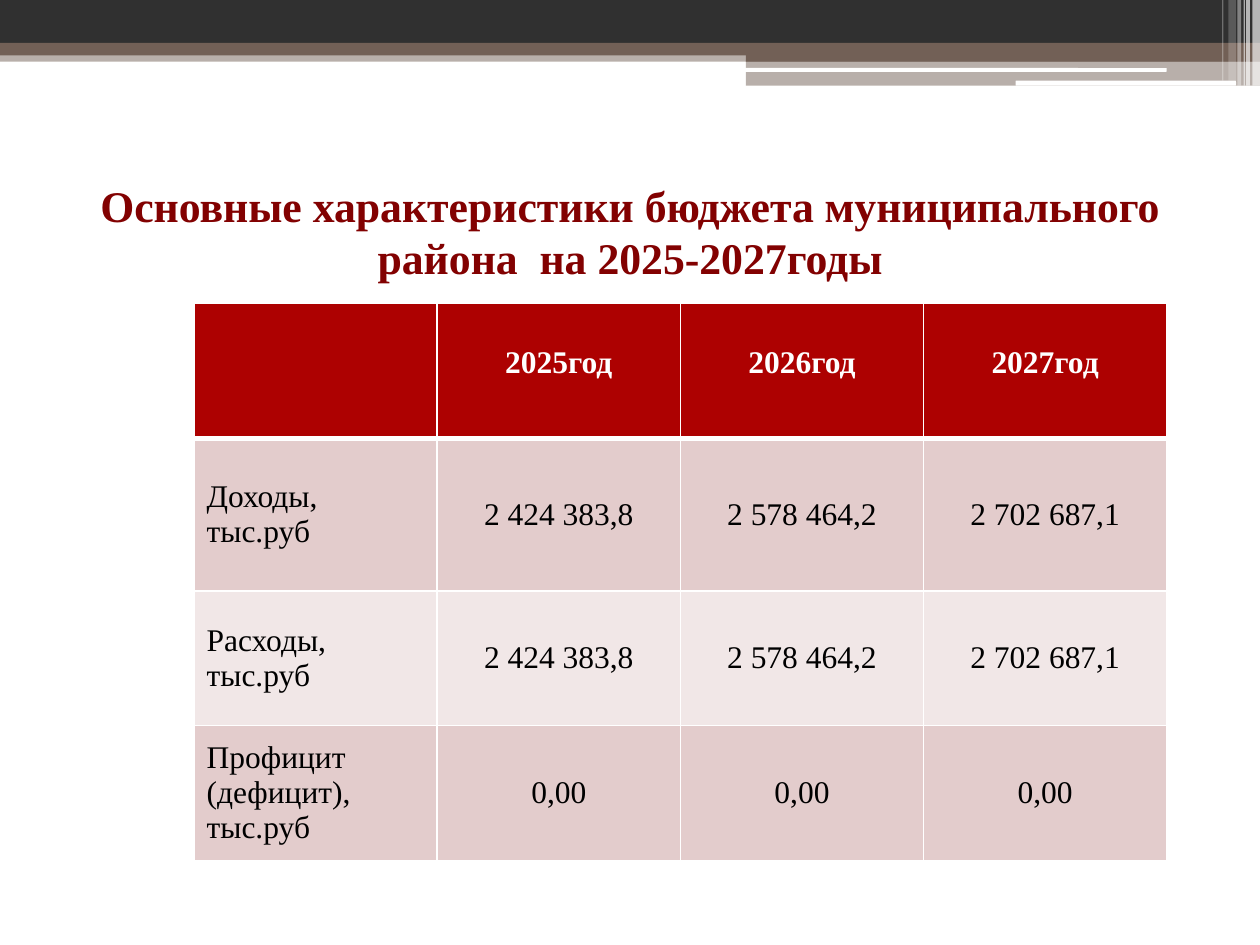
from lxml.etree import SubElement
from pptx import Presentation
from pptx.dml.color import RGBColor
from pptx.enum.shapes import MSO_SHAPE
from pptx.enum.text import MSO_ANCHOR, MSO_AUTO_SIZE, PP_ALIGN
from pptx.oxml import parse_xml
from pptx.oxml.ns import nsdecls, qn
from pptx.util import Pt

PX = 9144  # EMU per px, 100 px to the inch
FONT = "Times New Roman"

WHITE = RGBColor(0xFF, 0xFF, 0xFF)
BLACK = RGBColor(0x00, 0x00, 0x00)
CHARCOAL = RGBColor(0x30, 0x30, 0x30)
BROWN = RGBColor(0x72, 0x60, 0x56)
MAROON = RGBColor(0x82, 0x01, 0x01)
RED = RGBColor(0xAD, 0x01, 0x01)
ROSE = RGBColor(0xE3, 0xCC, 0xCC)
PALE_ROSE = RGBColor(0xF1, 0xE7, 0xE7)

TITLE = "Основные характеристики бюджета муниципального района  на 2025-2027годы"
BUDGET = [
    ["", "2025год", "2026год", "2027год"],
    ["Доходы, тыс.руб", "2 424 383,8", "2 578 464,2", "2 702 687,1"],
    ["Расходы, тыс.руб", "2 424 383,8", "2 578 464,2", "2 702 687,1"],
    ["Профицит (дефицит), тыс.руб", "0,00", "0,00", "0,00"],
]
ROW_HEIGHTS = [107, 121, 107, 107]

# Header parts: left, top, width, height, colour, opacity in percent
BANDS = [
    (0, 40, 1000, 9, BROWN, 50),
    (0, 0, 1000, 34, CHARCOAL, 100),
    (0, 34, 1000, 10, BROWN, 100),
    (592, 39, 408, 10, BROWN, 100),
    (592, 48, 408, 20, BROWN, 50),
]
SLOTS = [(591, 54, 335, 3, WHITE, 100), (806, 64, 175, 4, WHITE, 100)]
STRIPES = [
    (994, 0, 6, 68, WHITE, 65),
    (989, 0, 3, 68, WHITE, 65),
    (987, 0, 1, 68, WHITE, 60),
    (982, 0, 3, 68, WHITE, 40),
    (975, 0, 6, 64, WHITE, 20),
    (970, 0, 1, 64, WHITE, 30),
]


def add_bar(slide, preset, left, top, width, height, color, opacity):
    bar = slide.shapes.add_shape(preset, left * PX, top * PX, width * PX, height * PX)
    bar.shadow.inherit = False
    bar.line.fill.background()
    bar.fill.solid()
    bar.fill.fore_color.rgb = color
    if opacity < 100:
        tint = bar.fill._xPr.find(qn("a:solidFill"))[0]
        SubElement(tint, qn("a:alpha"), val=str(opacity * 1000))


def add_header(slide, left, top):
    for preset, bars in (
        (MSO_SHAPE.RECTANGLE, BANDS),
        (MSO_SHAPE.ROUNDED_RECTANGLE, SLOTS),
        (MSO_SHAPE.RECTANGLE, STRIPES),
    ):
        for x, y, *rest in bars:
            add_bar(slide, preset, left + x, top + y, *rest)


def write(paragraph, text, size, color, bold, align):
    paragraph.alignment = align
    run = paragraph.add_run()
    run.text = text
    run.font.name = FONT
    run.font.size = Pt(size)
    run.font.bold = bold
    run.font.color.rgb = color


def place_title(slide, left, top, width, height):
    title = slide.shapes.title
    title.left, title.top = left * PX, top * PX
    title.width, title.height = width * PX, height * PX
    frame = title.text_frame
    frame.word_wrap = True
    frame.auto_size = MSO_AUTO_SIZE.NONE
    frame.vertical_anchor = MSO_ANCHOR.MIDDLE
    write(frame.paragraphs[0], TITLE, 25, MAROON, True, PP_ALIGN.CENTER)


def set_borders(cell, top, bottom):
    """Draw white cell edges; top and bottom widths are in points."""
    properties = cell._tc.get_or_add_tcPr()
    for index, (side, width) in enumerate(zip("LRTB", (1, 1, top, bottom))):
        properties.insert(index, parse_xml(
            f'<a:ln{side} {nsdecls("a")} w="{Pt(width)}"><a:solidFill>'
            f'<a:srgbClr val="{WHITE}"/></a:solidFill></a:ln{side}>'))


def add_budget_table(slide, left, top, width):
    rows, columns = len(BUDGET), len(BUDGET[0])
    table = slide.shapes.add_table(
        rows, columns, left * PX, top * PX, width * PX, sum(ROW_HEIGHTS) * PX).table
    for column in table.columns:
        column.width = width * PX // columns
    for r, values in enumerate(BUDGET):
        table.rows[r].height = ROW_HEIGHTS[r] * PX
        is_head = r == 0
        for c, value in enumerate(values):
            cell = table.cell(r, c)
            set_borders(cell, 3 if r == 1 else 1, 3 if is_head else 1)
            cell.fill.solid()
            cell.fill.fore_color.rgb = RED if is_head else (PALE_ROSE, ROSE)[r % 2]
            cell.vertical_anchor = MSO_ANCHOR.TOP if is_head else MSO_ANCHOR.MIDDLE
            if is_head:
                cell.margin_top = 33 * PX
            if value:
                write(cell.text_frame.paragraphs[0], value, 18,
                      WHITE if is_head else BLACK, is_head,
                      PP_ALIGN.CENTER if c else PP_ALIGN.LEFT)


def main():
    deck = Presentation()
    deck.slide_width, deck.slide_height = 1000 * PX, 750 * PX
    slide = deck.slides.add_slide(deck.slide_layouts[5])
    slide.background.fill.solid()
    slide.background.fill.fore_color.rgb = WHITE
    add_header(slide, 0, 0)
    place_title(slide, 50, 125, 900, 117)
    add_budget_table(slide, 154, 241, 772)
    deck.save("out.pptx")


if __name__ == "__main__":
    main()
